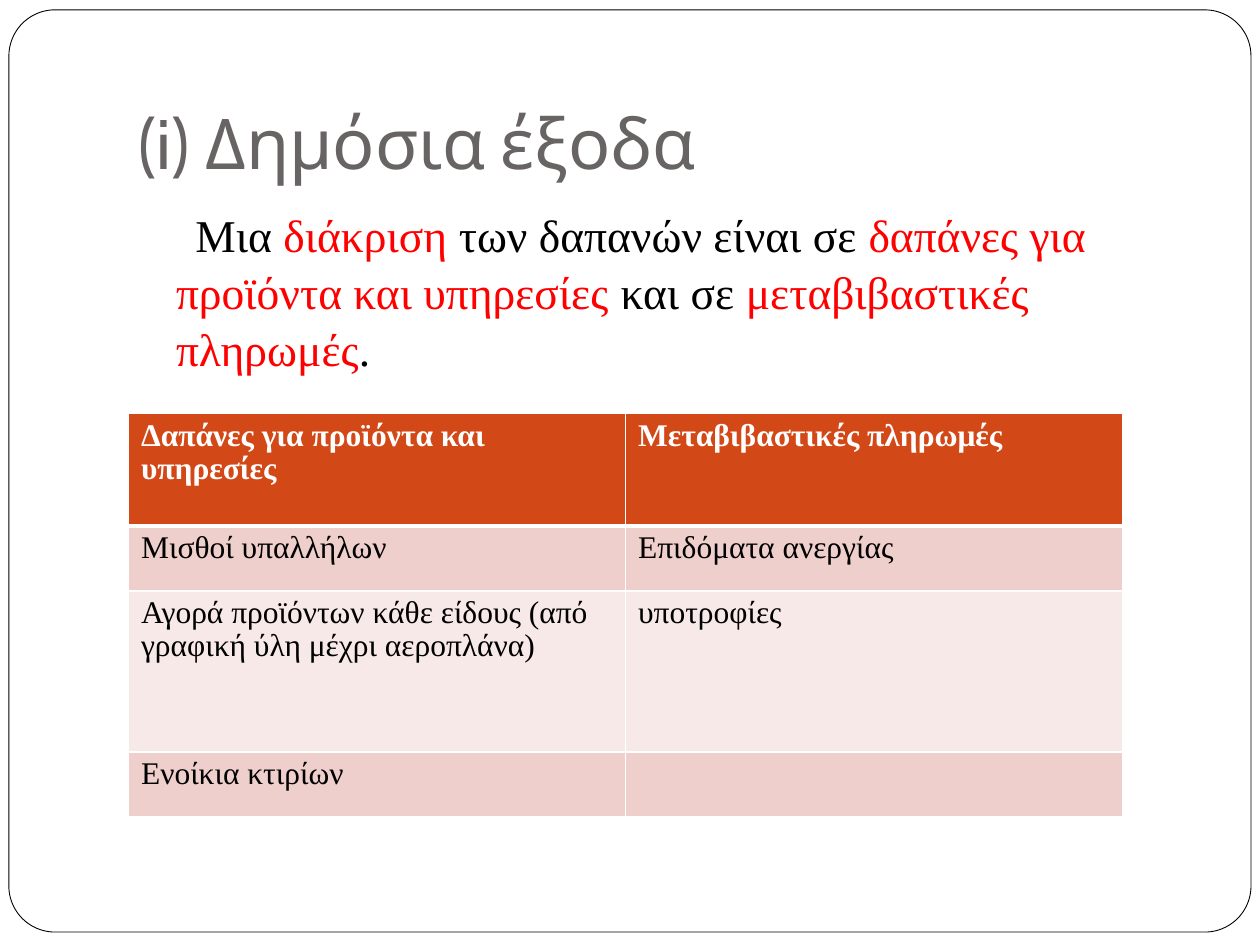
from lxml.etree import SubElement
from pptx import Presentation
from pptx.dml.color import RGBColor
from pptx.enum.shapes import MSO_SHAPE as Shape
from pptx.enum.text import MSO_ANCHOR as Anchor, MSO_AUTO_SIZE as AutoSize, PP_ALIGN as Align
from pptx.oxml.ns import qn
from pptx.util import Cm, Pt

BLACK = RGBColor(0x00, 0x00, 0x00)
WHITE = RGBColor(0xFF, 0xFF, 0xFF)
RED = RGBColor(0xFF, 0x00, 0x00)
GREY = RGBColor(0x69, 0x64, 0x64)
ORANGE = RGBColor(0xD3, 0x48, 0x17)
PINK = RGBColor(0xEF, 0xCF, 0xCC)
PALE_PINK = RGBColor(0xF7, 0xE9, 0xE8)

TITLE_FONT = "Cabin"
BODY_FONT = "Times New Roman"

STATEMENT = [
    ("Μια ", BLACK),
    ("διάκριση ", RED),
    ("των δαπανών είναι σε ", BLACK),
    ("δαπάνες για προϊόντα και υπηρεσίες ", RED),
    ("και σε ", BLACK),
    ("μεταβιβαστικές πληρωμές", RED),
    (".", BLACK),
]
EXPENSES = [
    ("Δαπάνες για προϊόντα και υπηρεσίες", "Μεταβιβαστικές πληρωμές"),
    ("Μισθοί υπαλλήλων", "Επιδόματα ανεργίας"),
    ("Αγορά προϊόντων κάθε είδους (από γραφική ύλη μέχρι αεροπλάνα)", "υποτροφίες"),
    ("Ενοίκια κτιρίων", ""),
]
ROW_HEIGHTS = [Cm(2.27), Cm(1.31), Cm(3.25), Cm(1.31)]
COLUMN_WIDTH = Cm(10.02)


def add_run(paragraph, text, size, color, font=BODY_FONT, bold=False):
    run = paragraph.add_run()
    run.text = text
    run.font.name = font
    run.font.size = Pt(size)
    run.font.bold = bold
    run.font.color.rgb = color


def add_frame(slide):
    """Draw the rounded page border behind everything else."""
    frame = slide.shapes.add_shape(
        Shape.ROUNDED_RECTANGLE, Cm(0.18), Cm(0.2), Cm(25.04), Cm(18.59))
    frame.adjustments[0] = 0.05
    frame.shadow.inherit = False
    frame.fill.solid()
    frame.fill.fore_color.rgb = WHITE
    frame.line.color.rgb = BLACK
    frame.line.width = Pt(0.5)
    slide.shapes._spTree.insert(2, frame._element)


def format_title(title, text):
    title.left, title.top, title.width, title.height = Cm(2.54), Cm(0.76), Cm(21.59), Cm(3.18)
    text_frame = title.text_frame
    text_frame.auto_size = AutoSize.NONE
    text_frame.vertical_anchor = Anchor.BOTTOM
    text_frame.margin_bottom = Cm(0.25)
    paragraph = text_frame.paragraphs[0]
    paragraph.alignment = Align.LEFT
    add_run(paragraph, text, 40, GREY, TITLE_FONT)


def add_statement(slide, parts):
    box = slide.shapes.add_textbox(Cm(2.54), Cm(4.01), Cm(21.59), Cm(3.9))
    box.text_frame.word_wrap = True
    paragraph = box.text_frame.paragraphs[0]
    paragraph.space_before = Pt(5.8)
    paragraph.line_spacing = 1.04
    properties = paragraph._p.get_or_add_pPr()
    properties.set("marL", str(Cm(0.76)))
    properties.set("indent", str(Cm(0.39)))
    for text, color in parts:
        add_run(paragraph, text, 26, color)


def set_borders(cell, top, bottom):
    """Give the cell white edges; call before its fill is set."""
    properties = cell._tc.get_or_add_tcPr()
    for edge, width in (("L", 1), ("R", 1), ("T", top), ("B", bottom)):
        line = SubElement(properties, qn(f"a:ln{edge}"), w=str(Pt(width)))
        fill = SubElement(line, qn("a:solidFill"))
        SubElement(fill, qn("a:srgbClr"), val=str(WHITE))


def format_cell(cell, text, row):
    is_header = row == 0
    set_borders(cell, top=3 if row == 1 else 1, bottom=3 if is_header else 1)
    cell.fill.solid()
    cell.fill.fore_color.rgb = ORANGE if is_header else (PALE_PINK, PINK)[row % 2]
    if text:
        paragraph = cell.text_frame.paragraphs[0]
        paragraph.line_spacing = 0.95
        add_run(paragraph, text, 18, WHITE if is_header else BLACK, bold=is_header)


def add_expense_table(slide, rows):
    table = slide.shapes.add_table(
        len(rows), len(rows[0]), Cm(2.59), Cm(8.33),
        COLUMN_WIDTH * len(rows[0]), sum(ROW_HEIGHTS)).table
    for column in table.columns:
        column.width = COLUMN_WIDTH
    for row, texts in enumerate(rows):
        table.rows[row].height = ROW_HEIGHTS[row]
        for column, text in enumerate(texts):
            format_cell(table.cell(row, column), text, row)


def main():
    presentation = Presentation()
    presentation.slide_width, presentation.slide_height = Cm(25.4), Cm(19.05)
    slide = presentation.slides.add_slide(presentation.slide_layouts[5])
    add_frame(slide)
    format_title(slide.shapes.title, "(i) Δημόσια έξοδα")
    add_statement(slide, STATEMENT)
    add_expense_table(slide, EXPENSES)
    presentation.save("out.pptx")


if __name__ == "__main__":
    main()
